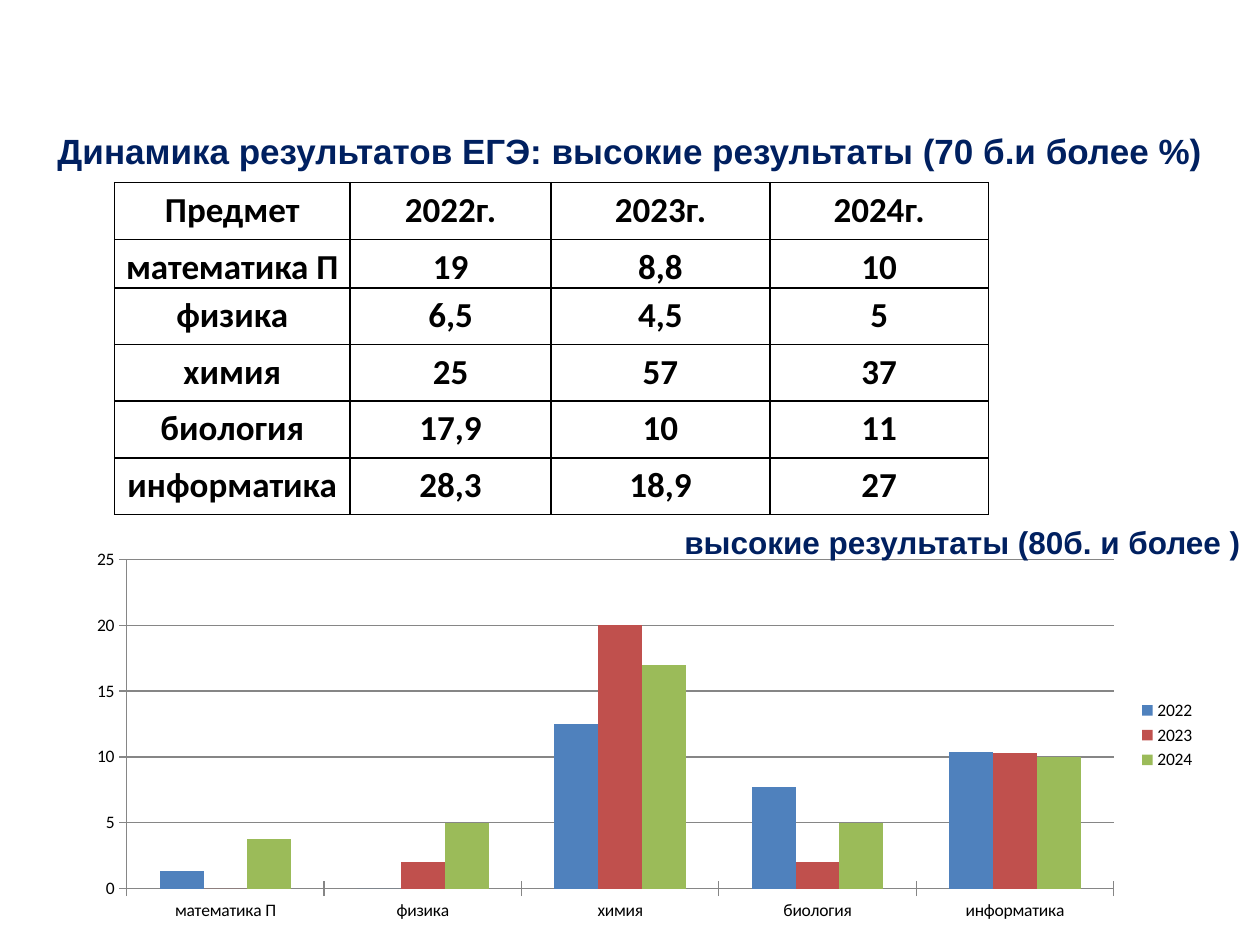
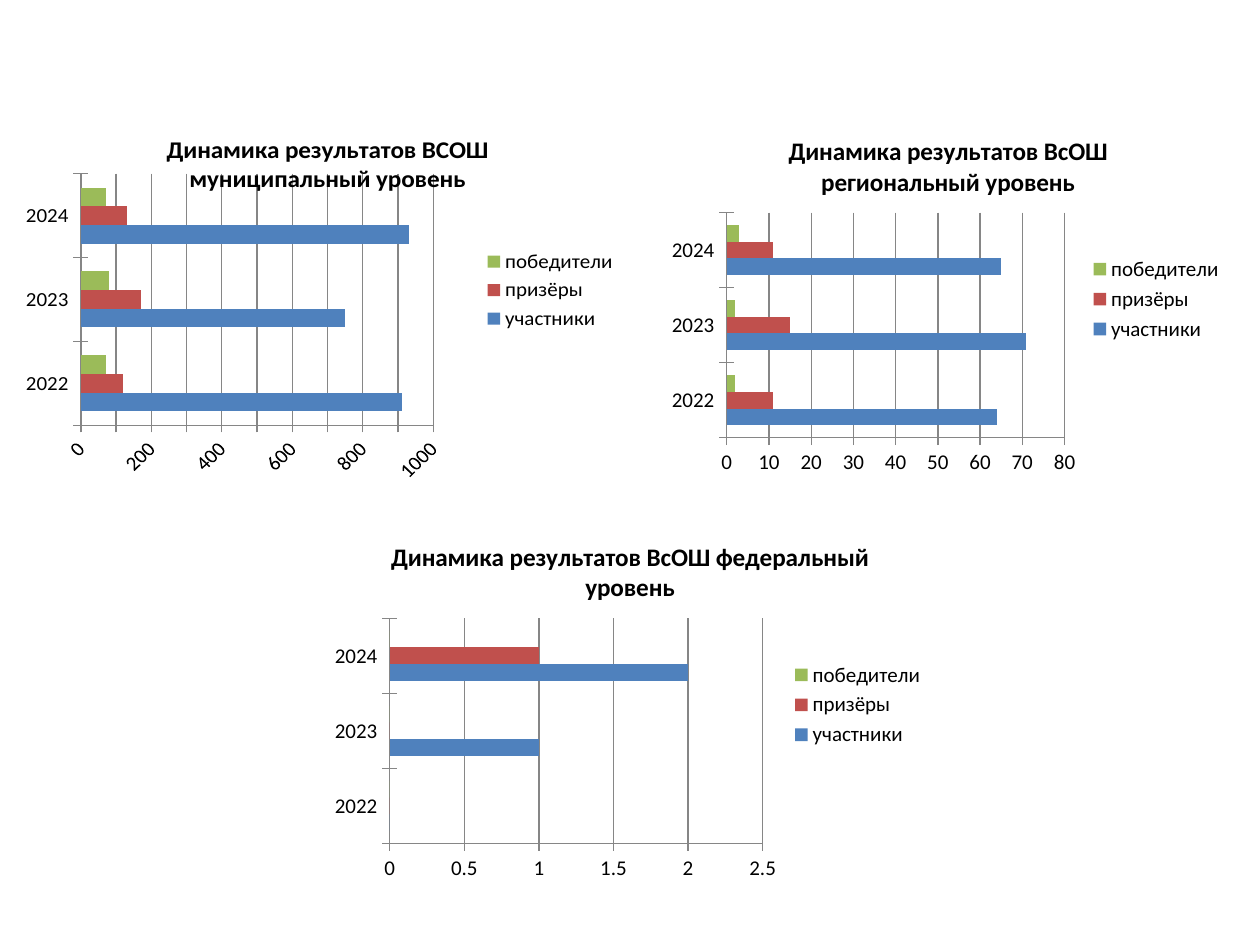
from lxml import etree
from pptx import Presentation
from pptx import util as u
from pptx.chart.data import CategoryChartData
from pptx.dml.color import RGBColor
from pptx.enum import chart as charts, text
from pptx.oxml import ns, parse_xml

NAVY = RGBColor(0x00, 0x20, 0x60)
BLACK = RGBColor(0x00, 0x00, 0x00)
WHITE = RGBColor(0xFF, 0xFF, 0xFF)
AXIS_GRAY = RGBColor(0x86, 0x86, 0x86)
SERIES_COLORS = (
    RGBColor(0x4F, 0x81, 0xBD),
    RGBColor(0xC0, 0x50, 0x4D),
    RGBColor(0x9B, 0xBB, 0x59),
)
YEARS = ("2022", "2023", "2024")
AWARDS = ("участники", "призёры", "победители")
SUBJECTS = ("математика П", "физика", "химия", "биология", "информатика")


def set_values(target, values):
    for name, value in values.items():
        setattr(target, name, value)


def set_font(font, size, color, name, bold=False):
    set_values(font, {"size": u.Pt(size), "name": name, "bold": bold})
    font.color.rgb = color


def points(box):
    return [u.Pt(length) for length in box]


def add_heading(page, box, words, size, align, anchor):
    label = page.shapes.add_textbox(*points(box))
    frame = label.text_frame
    set_values(frame, {"word_wrap": True, "vertical_anchor": anchor})
    para = frame.paragraphs[0]
    para.alignment = align
    span = para.add_run()
    span.text = words
    set_font(span.font, size, NAVY, "Arial", bold=True)


def add_borders(cell):
    properties = cell._tc.get_or_add_tcPr()
    for side in ("lnL", "lnR", "lnT", "lnB"):
        line = etree.SubElement(properties, ns.qn(f"a:{side}"), w=str(u.Pt(1)))
        fill = etree.SubElement(line, ns.qn("a:solidFill"))
        etree.SubElement(fill, ns.qn("a:srgbClr"), val=str(BLACK))


def fill_cell(cell, words):
    side = u.Pt(5)
    set_values(cell, {"margin_left": side, "margin_right": side,
                      "margin_top": 0, "margin_bottom": 0})
    add_borders(cell)
    cell.fill.solid()
    cell.fill.fore_color.rgb = WHITE
    para = cell.text_frame.paragraphs[0]
    set_values(para, {"alignment": text.PP_ALIGN.CENTER, "line_spacing": 1.15})
    span = para.add_run()
    span.text = words
    set_font(span.font, 20, BLACK, "Calibri", bold=True)


def add_score_table(page, left, top, widths, heights, rows):
    box = (left, top, sum(widths), sum(heights))
    table = page.shapes.add_table(len(rows), len(widths), *points(box)).table
    set_values(table, {"first_row": False, "horz_banding": False})
    for column, width in zip(table.columns, widths):
        column.width = u.Pt(width)
    for row, height, values in zip(table.rows, heights, rows):
        row.height = u.Pt(height)
        for cell, words in zip(row.cells, values):
            fill_cell(cell, words)


def set_inner_plot(chart, x, y, width, height):
    """Place the inner plot area as fractions of the chart."""
    plot_area = chart._chartSpace.chart.plotArea
    for old in plot_area.findall(ns.qn("c:layout")):
        plot_area.remove(old)
    parts = "".join(
        f'<c:{tag} val="{value}"/>'
        for tag, value in (
            ("layoutTarget", "inner"), ("xMode", "edge"), ("yMode", "edge"),
            ("x", x), ("y", y), ("w", width), ("h", height),
        )
    )
    plot_area.insert(0, parse_xml(
        f'<c:layout {ns.nsdecls("c")}><c:manualLayout>{parts}'
        "</c:manualLayout></c:layout>"
    ))


def add_bars(page, box, kind, size, categories, series, title=None):
    data = CategoryChartData()
    data.categories = categories
    for name, values in series:
        data.add_series(name, values)
    chart = page.shapes.add_chart(kind, *points(box), data).chart
    set_font(chart.font, size, BLACK, "Calibri")

    # Title
    chart.has_title = title is not None
    if title:
        span = chart.chart_title.text_frame.paragraphs[0].add_run()
        span.text = title
        set_font(span.font, size * 1.2, BLACK, "Calibri", bold=True)
        chart.chart_title.include_in_layout = False

    # Legend
    chart.has_legend = True
    set_values(chart.legend, {"position": charts.XL_LEGEND_POSITION.RIGHT,
                              "include_in_layout": False})

    # Axes and gridlines
    chart.value_axis.has_major_gridlines = True
    for axis in (chart.category_axis, chart.value_axis):
        axis.major_tick_mark = charts.XL_TICK_MARK.CROSS
        axis.format.line.color.rgb = AXIS_GRAY
    chart.value_axis.major_gridlines.format.line.color.rgb = AXIS_GRAY

    # Bars
    plot = chart.plots[0]
    set_values(plot, {"gap_width": 150, "vary_by_categories": False})
    for bars, color in zip(plot.series, SERIES_COLORS):
        bars.format.fill.solid()
        bars.format.fill.fore_color.rgb = color
    return chart


def build_exam_page(page):
    add_heading(page, (0, 60.5, 720, 51),
                "Динамика результатов ЕГЭ: высокие результаты (70 б.и более %)",
                20, text.PP_ALIGN.CENTER, text.MSO_ANCHOR.MIDDLE)

    # Shares of scores of 70 and more
    scores = (
        ("19", "8,8", "10"),
        ("6,5", "4,5", "5"),
        ("25", "57", "37"),
        ("17,9", "10", "11"),
        ("28,3", "18,9", "27"),
    )
    rows = [("Предмет", *(f"{year}г." for year in YEARS))]
    rows += [(subject, *values) for subject, values in zip(SUBJECTS, scores)]
    add_score_table(page, 65.5, 104.4, (134.5, 115, 125, 125),
                    (32.4, 26, *[32.4] * 4), rows)

    # Shares of scores of 80 and more
    top_scores = ((1.3, 0, 12.5, 7.7, 10.4), (0, 2, 20, 2, 10.3),
                  (3.8, 5, 17, 5, 10))
    add_bars(page, (42.5, 309.6, 648, 221),
             charts.XL_CHART_TYPE.COLUMN_CLUSTERED, 10, SUBJECTS,
             zip(YEARS, top_scores))
    add_heading(page, (384, 295.2, 360, 29), "высокие результаты (80б. и более )",
                18, text.PP_ALIGN.LEFT, text.MSO_ANCHOR.TOP)


def build_olympiad_page(page):
    height = 209.5
    levels = (
        ((14.4, 66.2, 345.6, height), "ВСОШ муниципальный",
         ((910, 750, 930), (120, 170, 130), (70, 80, 70)),
         (0.092, 0.166, 0.583, 0.722)),
        ((377.3, 66.2, 329, height), "ВсОШ региональный",
         ((64, 71, 65), (11, 15, 11), (2, 2, 3)), None),
        ((184.3, 298, 351.4, height), "ВсОШ федеральный",
         ((0, 1, 2), (0, 0, 1), (0, 0, 0)), None),
    )
    for box, level, counts, inner_plot in levels:
        chart = add_bars(page, box, charts.XL_CHART_TYPE.BAR_CLUSTERED, 12,
                         YEARS, zip(AWARDS, counts),
                         f"Динамика результатов {level} уровень")
        if inner_plot:
            set_inner_plot(chart, *inner_plot)


def main():
    deck = Presentation()
    set_values(deck, {"slide_width": u.Pt(720), "slide_height": u.Pt(540)})
    blank = deck.slide_layouts[6]
    for build in (build_exam_page, build_olympiad_page):
        build(deck.slides.add_slide(blank))
    deck.save("out.pptx")


if __name__ == "__main__":
    main()
